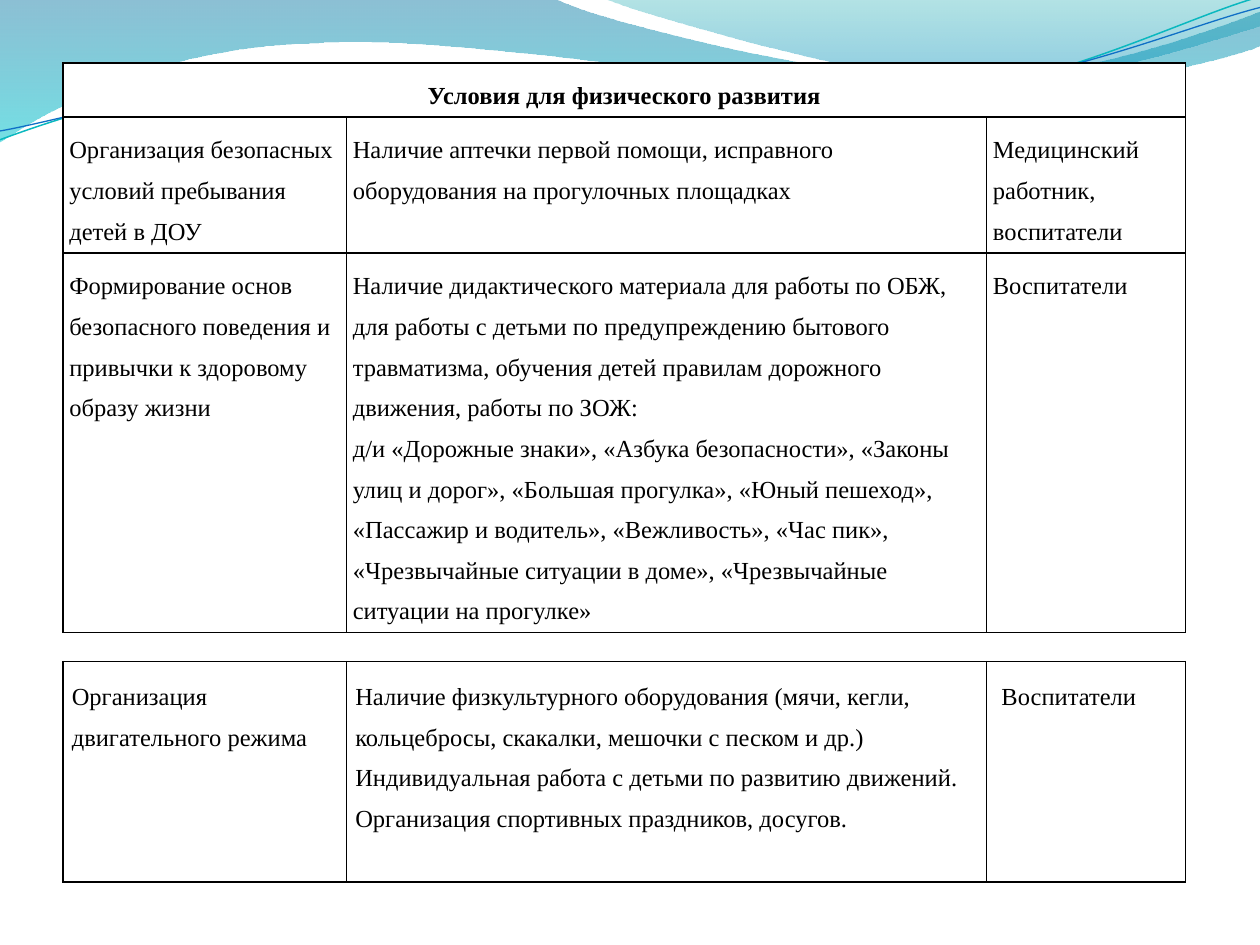
from math import cos, radians, sin

from lxml.etree import SubElement
from pptx import Presentation
from pptx.dml.color import RGBColor
from pptx.enum.text import PP_ALIGN as Align
from pptx.oxml import parse_xml
from pptx.oxml.ns import nsdecls, qn
from pptx.util import Inches, Pt

BLACK = RGBColor(0, 0, 0)
WHITE = RGBColor(255, 255, 255)
DEEP_BLUE = RGBColor(0x00, 0x74, 0xA1)
AQUA = RGBColor(0x00, 0xC6, 0xCF)
TEAL = RGBColor(0x00, 0xA1, 0xA9)
SKY = RGBColor(0x00, 0x8B, 0xBF)
LINE_TEAL = RGBColor(0x0A, 0xB8, 0xBF)
LINE_BLUE = RGBColor(0x0F, 0x6F, 0xC6)

# Content: a cell is a list of paragraphs
HEADING = "Условия для физического развития"
SAFETY_ROWS = [
    [[HEADING], [], []],
    [["Организация безопасных условий пребывания детей в ДОУ"],
     ["Наличие аптечки первой помощи, исправного оборудования на прогулочных площадках"],
     ["Медицинский работник, воспитатели"]],
    [["Формирование основ безопасного поведения и привычки к здоровому образу жизни"],
     ["Наличие дидактического материала для работы по ОБЖ, для работы с детьми по "
      "предупреждению бытового травматизма, обучения детей правилам дорожного движения, "
      "работы по ЗОЖ:",
      "д/и «Дорожные знаки», «Азбука безопасности», «Законы улиц и дорог», «Большая "
      "прогулка», «Юный пешеход», «Пассажир и водитель», «Вежливость», «Час пик», "
      "«Чрезвычайные ситуации в доме», «Чрезвычайные ситуации на прогулке»"],
     ["Воспитатели"]],
]
ACTIVITY_ROWS = [
    [["Организация двигательного режима"],
     ["Наличие физкультурного оборудования (мячи, кегли, кольцебросы, скакалки, мешочки "
      "с песком и др.)\nИндивидуальная работа с детьми по развитию движений.\n"
      "Организация спортивных праздников, досугов."],
     [" Воспитатели "]],
]
COLUMNS = [2.25, 5.08, 1.58]

# Outlines in inches: one point is a straight step, three points are a Bezier curve
WAVES = [
    ([[(0, 0)], [(4.4, -0.01)], [(4.76, 0.17), (6.64, 0.63), (7.58, 0.63)],
      [(8.53, 0.63), (9.58, 0.26), (10, 0.09)], [(10.01, 0.36)],
      [(9.83, 0.44), (8.7, 0.76), (7.46, 0.75)],
      [(6.22, 0.75), (3.82, 0.28), (2.57, 0.34)],
      [(1.29, 0.36), (0.46, 0.83), (-0.01, 1.13)], [(0, 0)]],
     [(DEEP_BLUE, 45), (AQUA, 55)]),
    ([[(4.79, -0.01)], [(5.09, 0.11), (6.82, 0.62), (7.69, 0.65)],
      [(8.56, 0.69), (9.61, 0.32), (10, 0.21)], [(10, 0)], [(4.79, -0.01)]],
     [(TEAL, 30), (SKY, 45)]),
]
THREADS = [
    ([[(0, 1.11)], [(0.48, 0.93), (1.58, 0.57), (2.77, 0.52)],
      [(3.95, 0.47), (5.93, 0.89), (7.13, 0.8)],
      [(8.33, 0.71), (9.38, 0.15), (9.98, -0.02)]], LINE_TEAL, 0.85),
    ([[(0, 1.04)], [(0.47, 0.96), (1.64, 0.61), (2.83, 0.56)],
      [(4.03, 0.51), (5.97, 0.84), (7.17, 0.75)],
      [(8.36, 0.67), (9.41, 0.21), (10, 0.06)]], LINE_BLUE, 0.75),
]
THREAD_TILT = -2.7
UNITS = 1000  # path units per inch


def add_outline(slide, steps, close):
    steps = [[(round(x * UNITS), round(y * UNITS)) for x, y in step] for step in steps]
    anchors = [step[-1] for step in steps]
    builder = slide.shapes.build_freeform(*anchors[0], scale=Inches(1) / UNITS)
    builder.add_line_segments(anchors[1:], close=close)
    outline = builder.convert_to_shape()
    outline.shadow.inherit = False

    # Bend the straight segments that have control points
    left = min(x for x, _ in anchors)
    top = min(y for _, y in anchors)
    segments = list(outline._element.spPr.iter(qn("a:lnTo")))
    for segment, step in zip(segments, steps[1:]):
        if len(step) == 3:
            points = "".join(f'<a:pt x="{x - left}" y="{y - top}"/>' for x, y in step)
            segment.getparent().replace(segment, parse_xml(
                f'<a:cubicBezTo {nsdecls("a")}>{points}</a:cubicBezTo>'))
    return outline


def add_wave(slide, steps, stops):
    wave = add_outline(slide, steps, True)
    wave.line.fill.background()
    wave.fill.gradient()
    wave.fill.gradient_angle = 270
    for i, (stop, (color, opacity)) in enumerate(zip(wave.fill.gradient_stops, stops)):
        stop.color.rgb = color
        stop.position = i
        color_xml = stop._gs.find(qn("a:srgbClr"))
        SubElement(color_xml, qn("a:alpha"), val=str(opacity * 1000))


def level(steps, tilt):
    """Turn an outline back by its tilt, around the middle of its ends."""
    (x1, y1), (x2, y2) = steps[0][-1], steps[-1][-1]
    mid_x, mid_y = (x1 + x2) / 2, (y1 + y2) / 2
    c, s = cos(radians(-tilt)), sin(radians(-tilt))
    return [[(mid_x + (x - mid_x) * c - (y - mid_y) * s,
              mid_y + (x - mid_x) * s + (y - mid_y) * c) for x, y in step]
            for step in steps]


def add_thread(slide, steps, color, width):
    thread = add_outline(slide, level(steps, THREAD_TILT), False)
    thread.rotation = THREAD_TILT
    thread.fill.background()
    thread.line.color.rgb = color
    thread.line.width = Pt(width)


def add_borders(cell):
    for i, side in enumerate("LRTB"):
        cell._tc.get_or_add_tcPr().insert(i, parse_xml(
            f'<a:ln{side} {nsdecls("a")} w="12700"><a:solidFill>'
            f'<a:srgbClr val="{BLACK}"/></a:solidFill></a:ln{side}>'))


def fill_cell(cell, paragraphs, inset, align):
    cell.fill.solid()
    cell.fill.fore_color.rgb = WHITE
    cell.margin_left = cell.margin_right = Inches(inset)
    cell.margin_top = cell.margin_bottom = Inches(inset)
    add_borders(cell)
    frame = cell.text_frame
    for i, text in enumerate(paragraphs):
        paragraph = frame.add_paragraph() if i else frame.paragraphs[0]
        paragraph.text = text
        paragraph.alignment = align
        paragraph.line_spacing = 1.5
        font = paragraph.font
        font.name, font.size = "Times New Roman", Pt(14)
        font.color.rgb = BLACK
        font.bold = text == HEADING


def add_grid(slide, rows, top, heights, inset, aligns):
    table = slide.shapes.add_table(
        len(rows), len(COLUMNS), Inches(0.5), Inches(top),
        Inches(sum(COLUMNS)), Inches(sum(heights))).table
    table.first_row = table.horz_banding = False
    for column, width in zip(table.columns, COLUMNS):
        column.width = Inches(width)
    for r, (row, height) in enumerate(zip(rows, heights)):
        table.rows[r].height = Inches(height)
        for c, paragraphs in enumerate(row):
            align = Align.CENTER if paragraphs == [HEADING] else aligns[c]
            fill_cell(table.cell(r, c), paragraphs, inset, align)
    return table


def main():
    prs = Presentation()
    prs.slide_width, prs.slide_height = Inches(10), Inches(7.5)
    slide = prs.slides.add_slide(prs.slide_layouts[6])

    # Waves and thin lines along the top
    for steps, stops in WAVES:
        add_wave(slide, steps, stops)
    for steps, color, width in THREADS:
        add_thread(slide, steps, color, width)

    # Two tables on the same columns
    safety = add_grid(slide, SAFETY_ROWS, 0.5, [0.43, 1.08, 3.01], 0.05, [Align.LEFT] * 3)
    safety.cell(0, 0).merge(safety.cell(0, 2))
    add_grid(slide, ACTIVITY_ROWS, 5.25, [1.75], 0.07,
             [Align.JUSTIFY, Align.LEFT, Align.JUSTIFY])
    prs.save("out.pptx")


if __name__ == "__main__":
    main()
